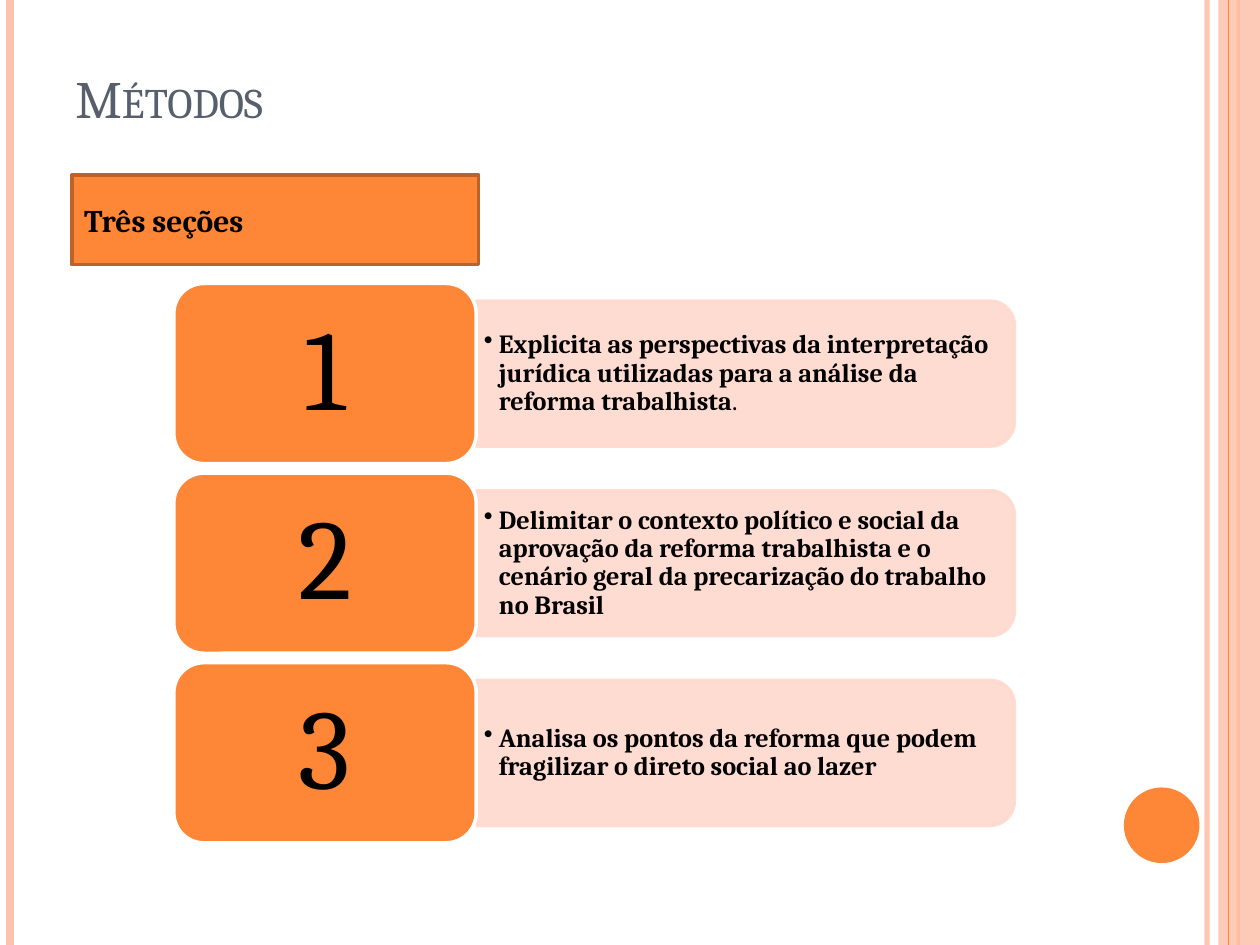
from lxml.etree import SubElement
from pptx import Presentation
from pptx.dml.color import RGBColor
from pptx.enum.shapes import MSO_CONNECTOR, MSO_SHAPE
from pptx.enum.text import MSO_ANCHOR, PP_ALIGN
from pptx.oxml.ns import qn
from pptx.util import Inches, Pt

ORANGE = RGBColor(0xFE, 0x86, 0x37)
DARK_ORANGE = RGBColor(0xBC, 0x63, 0x29)
PEACH = RGBColor(0xFE, 0xC3, 0xAE)
PALE_PEACH = RGBColor(0xFF, 0xD9, 0xCE)
SLATE = RGBColor(0x57, 0x5F, 0x6D)
BLACK = RGBColor(0, 0, 0)
WHITE = RGBColor(0xFF, 0xFF, 0xFF)
FONT = "Cambria"

STRIPES = [(9.58, PEACH, 3, 93), (0.08, PEACH, 4.5, 100), (9.83, ORANGE, 1.5, 100)]

# Each section is a list of (text, bold) runs.
SECTIONS = [
    [("Explicita as perspectivas da interpretação jurídica utilizadas "
      "para a análise da reforma trabalhista", True), (".", False)],
    [("Delimitar o contexto político e social da aprovação da reforma trabalhista "
      "e o cenário geral da precarização do trabalho no Brasil", True)],
    [("Analisa os pontos da reforma que podem fragilizar o direto social ao lazer", True)],
]
ROW_TOP, ROW_PITCH = 2.25, 3.01 / 2
CARD_LEFT, CARD_W, CARD_H = 1.38, 2.4, 1.43
PANEL_W, PANEL_H = 4.27, 1.15
TEXT_W, TEXT_H = 4.21, 1.03


def set_opacity(shape, percent):
    """Apply one opacity to every colour of the shape's fill and line."""
    if percent < 100:
        for color in shape._element.spPr.iter(qn("a:srgbClr")):
            SubElement(color, qn("a:alpha"), val=str(percent * 1000))


def add_stripe(s, x, color, width, opacity=100):
    line = s.shapes.add_connector(
        MSO_CONNECTOR.STRAIGHT, Inches(x), 0, Inches(x), Inches(7.5))
    line.line.color.rgb = color
    line.line.width = Pt(width)
    SubElement(line._element.spPr, qn("a:effectLst"))
    set_opacity(line, opacity)


def add_block(s, kind, box, fill, outline=None, opacity=100):
    sp = s.shapes.add_shape(kind, *map(Inches, box))
    sp.shadow.inherit = False
    sp.fill.solid()
    sp.fill.fore_color.rgb = fill
    if outline is None:
        sp.line.fill.background()
    else:
        sp.line.color.rgb = outline
        sp.line.width = Pt(2)
    set_opacity(sp, opacity)
    return sp


def add_text_box(s, box):
    tb = s.shapes.add_textbox(*map(Inches, box))
    tb.text_frame.word_wrap = True
    return tb


def write(shape, runs, size, color=BLACK, align=PP_ALIGN.LEFT, anchor=MSO_ANCHOR.MIDDLE):
    """Fill the shape's first paragraph with (text, bold) runs and return it."""
    tf = shape.text_frame
    tf.vertical_anchor = anchor
    p = tf.paragraphs[0]
    p.alignment = align
    for text, bold in runs:
        r = p.add_run()
        r.text = text
        r.font.name = FONT
        r.font.size = Pt(size)
        r.font.bold = bold
        r.font.color.rgb = color
    return p


def set_margins(shape, horizontal, vertical):
    tf = shape.text_frame
    tf.margin_left = tf.margin_right = Inches(horizontal)
    tf.margin_top = tf.margin_bottom = Inches(vertical)


def add_bullet(p, indent):
    pPr = p._p.get_or_add_pPr()
    pPr.set("marL", str(Inches(indent)))
    pPr.set("indent", str(-Inches(indent)))
    SubElement(pPr, qn("a:buChar"), char="•")


def add_section(s, index, runs):
    top = ROW_TOP + index * ROW_PITCH
    middle = top + CARD_H / 2
    panel_left = CARD_LEFT + CARD_W

    # The panel is an upright shape turned a quarter about its centre.
    panel = add_block(
        s, MSO_SHAPE.ROUND_2_SAME_RECTANGLE,
        (panel_left + (PANEL_W - PANEL_H) / 2, middle - PANEL_W / 2, PANEL_H, PANEL_W),
        PALE_PEACH, PALE_PEACH, 90)
    panel.rotation = 90

    body = add_text_box(s, (panel_left, middle - TEXT_H / 2, TEXT_W, TEXT_H))
    set_margins(body, 0.06, 0.03)
    p = write(body, runs, 15)
    p.line_spacing = 0.9
    add_bullet(p, 0.12)

    card = add_block(s, MSO_SHAPE.ROUNDED_RECTANGLE,
                     (CARD_LEFT, top, CARD_W, CARD_H), ORANGE, WHITE)
    set_margins(card, 0.27, 0.14)
    p = write(card, [(str(index + 1), False)], 65, align=PP_ALIGN.CENTER)
    p.line_spacing = 0.9


def add_frame(s):
    for stripe in STRIPES:
        add_stripe(s, *stripe)
    add_block(s, MSO_SHAPE.RECTANGLE, (9.67, 0, 0.33, 7.5), PEACH, opacity=87)
    add_stripe(s, 9.75, ORANGE, 0.75)
    add_block(s, MSO_SHAPE.OVAL, (8.92, 6.25, 0.6, 0.6), ORANGE)


def add_title(s, text):
    title = add_text_box(s, (0.5, 0.3, 8.17, 0.77))
    p = write(title, [(text, False)], 30, SLATE, anchor=MSO_ANCHOR.BOTTOM)
    p.runs[0].font._element.set("cap", "small")


def main():
    prs = Presentation()
    prs.slide_width, prs.slide_height = Inches(10), Inches(7.5)
    s = prs.slides.add_slide(prs.slide_layouts[6])

    add_frame(s)
    add_title(s, "Métodos")
    for index, runs in enumerate(SECTIONS):
        add_section(s, index, runs)
    heading = add_block(s, MSO_SHAPE.RECTANGLE, (0.57, 1.39, 3.23, 0.71),
                        ORANGE, DARK_ORANGE)
    write(heading, [("Três seções", True)], 18)

    prs.save("out.pptx")


if __name__ == "__main__":
    main()
